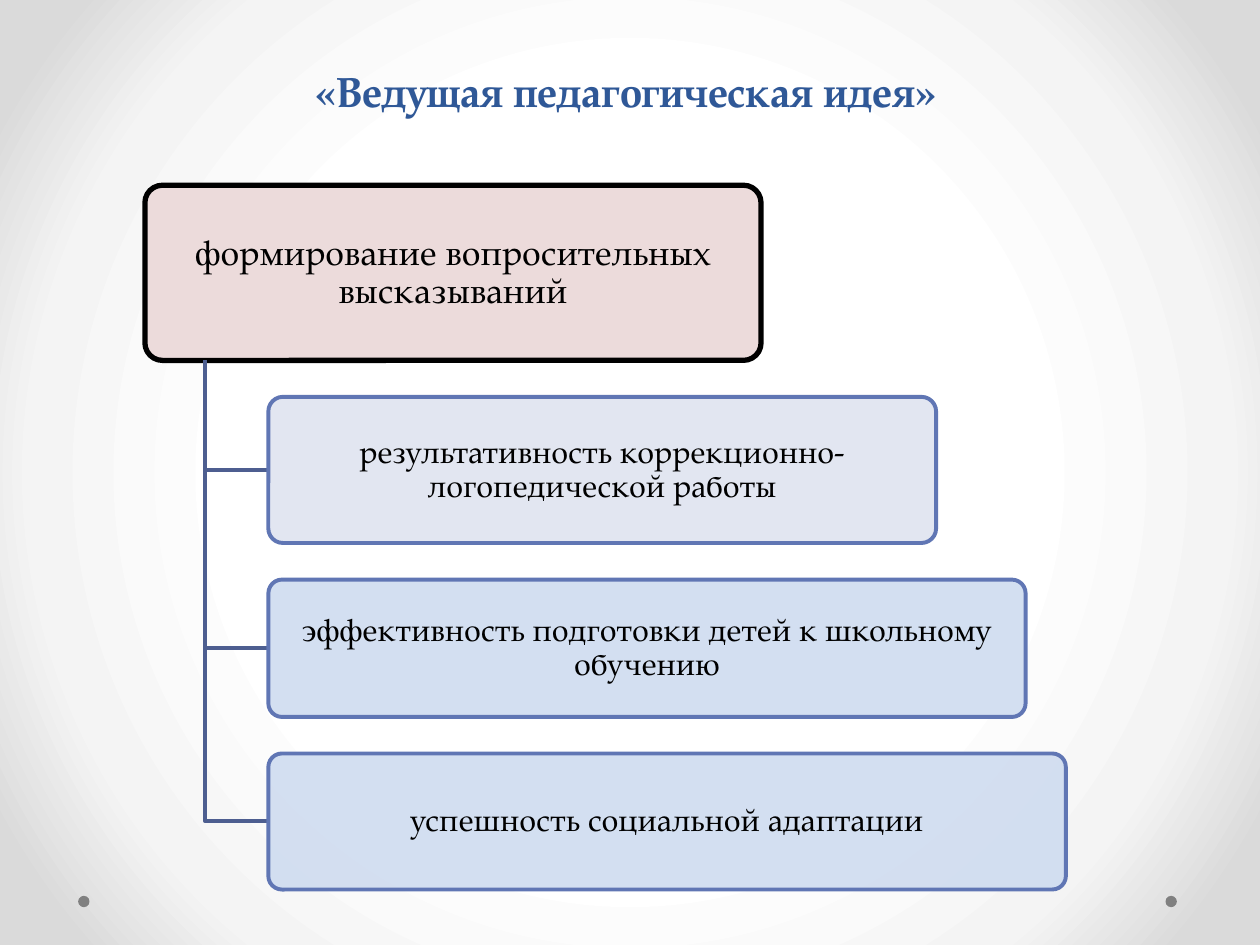
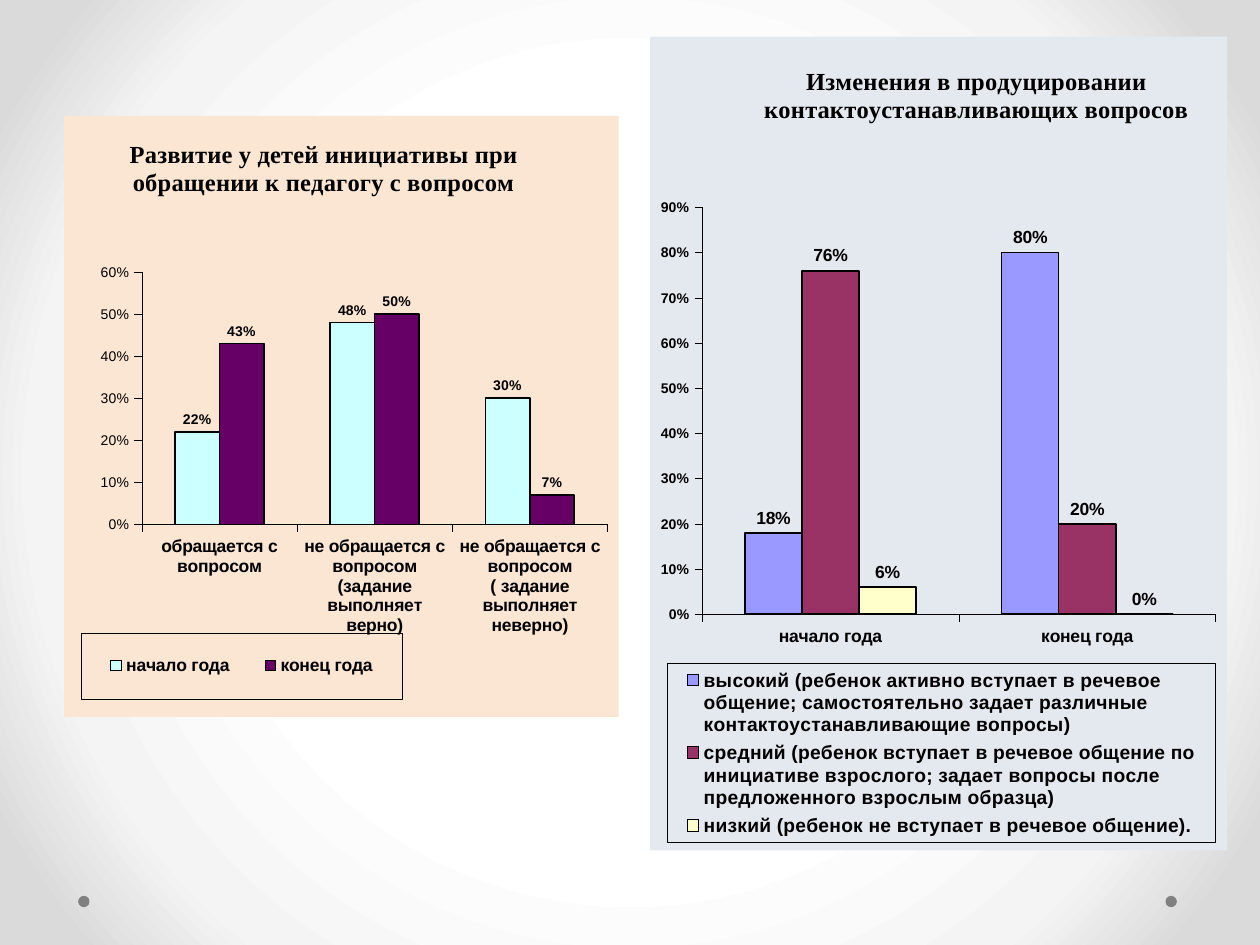
from dataclasses import dataclass
from typing import Any, NamedTuple

from lxml.etree import SubElement
from pptx import Presentation
from pptx.chart.data import CategoryChartData
from pptx.dml.color import RGBColor as RGB
from pptx.enum.chart import XL_CHART_TYPE as ChartType, XL_LABEL_POSITION as LabelPos
from pptx.enum.chart import XL_LEGEND_POSITION as LegendPos, XL_TICK_MARK as Tick
from pptx.enum.shapes import MSO_SHAPE as Shape
from pptx.enum.text import MSO_ANCHOR as Anchor, MSO_AUTO_SIZE as AutoSize, PP_ALIGN as Align
from pptx.oxml import parse_xml
from pptx.oxml.ns import nsdecls, qn
from pptx.util import Pt

PX = 9144
TITLE_ONLY, BLANK = 5, 6


@dataclass(frozen=True)
class Theme:
    """Colours, fonts and type sizes of the deck."""
    ink: str = "000000"
    title: str = "2F5897"
    dot: str = "808080"
    branch: str = "4D5E90"
    border: str = "6076B4"
    root_fill: str = "ECDBDB"
    first_fill: str = "DFE4F0"
    next_fill: str = "CFDCF0"
    backdrop: tuple = ((50, "FFFFFF"), (76, "F4F4F4"), (92, "DADADA"))
    body_font: str = "TeX Gyre Pagella"
    chart_font: str = "Arial"
    chart_title_font: str = "Times New Roman"
    title_size: int = 24
    root_size: int = 20
    node_size: int = 18
    chart_title_size: int = 14
    axis_size: int = 8
    category_size: int = 10


T = Theme()


class Box(NamedTuple):
    """A rectangle in px."""
    x: int
    y: int
    w: int
    h: int

    def emu(self) -> list[int]:
        """Return the four lengths in EMU."""
        return [v * PX for v in self]


class Node(NamedTuple):
    """A rounded box of the tree."""
    text: str
    box: Box
    fill: str
    border: str = T.border
    weight: float = 2.25
    size: int = T.node_size
    opacity: int = 90


class Series(NamedTuple):
    """One set of columns."""
    name: str
    values: tuple
    color: str


class ChartSpec(NamedTuple):
    """A column chart panel; layouts are fractions of the panel."""
    box: Box
    fill: str
    title: str
    title_align: Align
    title_at: tuple
    plot_at: tuple
    legend_at: tuple
    categories: tuple
    series: tuple
    top: float
    label_size: int
    legend_size: int
    bold_scale: bool


ROOT = Node("формирование вопросительных высказываний", Box(115, 147, 489, 139),
            T.root_fill, T.ink, 3, T.root_size, 100)
BRANCHES = (
    Node("результативность коррекционно-логопедической работы",
         Box(213, 315, 530, 116), T.first_fill),
    Node("эффективность подготовки детей к школьному обучению",
         Box(213, 460, 601, 109), T.next_fill),
    Node("успешность социальной адаптации", Box(213, 598, 633, 108), T.next_fill),
)
DOTS = (Box(925, 711, 9, 9), Box(62, 711, 9, 9))

CHARTS = (
    ChartSpec(
        Box(51, 92, 440, 477), "FAE6D3",
        "Развитие у детей инициативы при обращении к педагогу с вопросом",
        Align.LEFT, (0.11, 0.03), (0.14, 0.26, 0.84, 0.42), (0.03, 0.86, 0.58, 0.11),
        ("обращается с вопросом",
         "не обращается с вопросом (задание выполняет верно)",
         "не обращается с вопросом ( задание выполняет неверно)"),
        (Series("начало года", (0.22, 0.48, 0.3), "CCFFFF"),
         Series("конец года", (0.43, 0.5, 0.07), "660066")),
        0.6, 8, 10, False),
    ChartSpec(
        Box(516, 29, 458, 646), "E4E9EF",
        "Изменения в продуцировании контактоустанавливающих вопросов",
        Align.CENTER, (0.19, 0.03), (0.09, 0.21, 0.89, 0.5), (0.03, 0.77, 0.95, 0.22),
        ("начало года", "конец года"),
        (Series("высокий (ребенок активно вступает в речевое общение; самостоятельно "
                "задает различные контактоустанавливающие вопросы)", (0.18, 0.8), "9999FF"),
         Series("средний (ребенок вступает в речевое общение по инициативе взрослого; "
                "задает вопросы после предложенного взрослым образца)", (0.76, 0.2), "993366"),
         Series("низкий (ребенок не вступает в речевое общение).", (0.06, 0), "FFFFCC")),
        0.9, 10, 11, True),
)


def put(obj: Any, **values: Any) -> None:
    """Set several attributes of an object."""
    for name, value in values.items():
        setattr(obj, name, value)


def set_font(font: Any, name: str, size: float, color: str = T.ink, bold: bool = False) -> None:
    """Format a font."""
    put(font, name=name, size=Pt(size), bold=bold)
    font.color.rgb = RGB.from_string(color)


def set_fill(fill: Any, color: str) -> None:
    """Give a solid fill."""
    fill.solid()
    fill.fore_color.rgb = RGB.from_string(color)


def set_line(line: Any, color: str, weight: float) -> None:
    """Give a solid outline."""
    set_fill(line.fill, color)
    line.width = Pt(weight)


def set_backdrop(master: Any) -> None:
    """Paint the radial gradient on the slide master."""
    stops = "".join(f'<a:gs pos="{pos * 1000}"><a:srgbClr val="{color}"/></a:gs>'
                    for pos, color in T.backdrop)
    c_sld = master.element.find(qn("p:cSld"))
    for old in c_sld.findall(qn("p:bg")):
        c_sld.remove(old)
    c_sld.insert(0, parse_xml(
        f'<p:bg {nsdecls("p", "a")}><p:bgPr><a:gradFill rotWithShape="1"><a:gsLst>{stops}</a:gsLst>'
        '<a:path path="circle"><a:fillToRect l="50000" t="50000" r="50000" b="50000"/></a:path>'
        '</a:gradFill><a:effectLst/></p:bgPr></p:bg>'))


def add_slide(prs: Any, layout: int) -> Any:
    """Add a slide with the two corner dots."""
    s = prs.slides.add_slide(prs.slide_layouts[layout])
    for box in DOTS:
        sp = s.shapes.add_shape(Shape.OVAL, *box.emu())
        sp.shadow.inherit = False
        set_fill(sp.fill, T.dot)
        sp.line.fill.background()
    return s


def add_title(s: Any, text: str, box: Box) -> None:
    """Place and format the title placeholder."""
    sp = s.shapes.title
    put(sp, **dict(zip(("left", "top", "width", "height"), box.emu())))
    tf = sp.text_frame
    put(tf, text=text, word_wrap=True, auto_size=AutoSize.NONE, vertical_anchor=Anchor.BOTTOM)
    p = tf.paragraphs[0]
    put(p, alignment=Align.CENTER, line_spacing=Pt(58))
    set_font(p.runs[0].font, T.body_font, T.title_size, T.title, True)


def add_node(s: Any, node: Node) -> None:
    """Draw a rounded box with its text."""
    sp = s.shapes.add_shape(Shape.ROUNDED_RECTANGLE, *node.box.emu())
    sp.shadow.inherit = False
    sp.adjustments[0] = 0.1
    set_fill(sp.fill, node.fill)
    color = sp.fill._xPr.find(qn("a:solidFill"))[0]
    SubElement(color, qn("a:alpha"), val=str(node.opacity * 1000))
    set_line(sp.line, node.border, node.weight)
    tf = sp.text_frame
    put(tf, text=node.text, word_wrap=True, vertical_anchor=Anchor.MIDDLE,
        margin_left=4 * PX, margin_right=4 * PX, margin_top=3 * PX, margin_bottom=3 * PX)
    p = tf.paragraphs[0]
    put(p, alignment=Align.CENTER, line_spacing=0.9)
    set_font(p.runs[0].font, T.body_font, node.size)


def add_branch(s: Any, root: Box, child: Box) -> None:
    """Draw the elbow from the root down to a child."""
    x, y = root.x + root.w // 10, child.y + child.h // 2
    builder = s.shapes.build_freeform(x, root.y + root.h, scale=PX)
    builder.add_line_segments([(x, y), (child.x, y)], close=False)
    sp = builder.convert_to_shape()
    sp.shadow.inherit = False
    sp.fill.background()
    set_line(sp.line, T.branch, 2.25)


def set_layout(el: Any, at: tuple, after: str = "", inner: bool = False) -> None:
    """Fix the place of a chart part as fractions of the chart."""
    for old in el.findall(qn("c:layout")):
        el.remove(old)
    keys = ("x", "y", "w", "h")[:len(at)]
    target = '<c:layoutTarget val="inner"/>' if inner else ""
    modes = "".join(f'<c:{k}Mode val="edge"/>' for k in keys if k in "xy")
    sizes = "".join(f'<c:{k} val="{v}"/>' for k, v in zip(keys, at))
    layout = parse_xml(f'<c:layout {nsdecls("c")}><c:manualLayout>{target}{modes}{sizes}'
                       '</c:manualLayout></c:layout>')
    if after:
        el.find(qn(after)).addnext(layout)
    else:
        el.insert(0, layout)


def paint_part(el: Any, fill: str = "", line: str = "") -> None:
    """Give a chart part its fill and outline."""
    def solid(color: str) -> str:
        """Return the fill element for a colour or for none."""
        return (f'<a:solidFill><a:srgbClr val="{color}"/></a:solidFill>'
                if color else "<a:noFill/>")

    el.find(qn("c:txPr")).addprevious(parse_xml(
        f'<c:spPr {nsdecls("c", "a")}>{solid(fill)}<a:ln w="3175">{solid(line)}</a:ln></c:spPr>'))


def format_axis(axis: Any, size: int, bold: bool) -> None:
    """Format an axis line, its ticks and its labels."""
    put(axis, has_major_gridlines=False, major_tick_mark=Tick.OUTSIDE, minor_tick_mark=Tick.NONE)
    set_line(axis.format.line, T.ink, 0.25)
    set_font(axis.tick_labels.font, T.chart_font, size, bold=bold)


def add_chart(s: Any, spec: ChartSpec) -> None:
    """Draw a column chart panel."""
    data = CategoryChartData(number_format="0%")
    data.categories = spec.categories
    for ser in spec.series:
        data.add_series(ser.name, ser.values)
    chart = s.shapes.add_chart(ChartType.COLUMN_CLUSTERED, *spec.box.emu(), data).chart
    set_font(chart.font, T.chart_font, T.category_size, bold=True)
    paint_part(chart.element, fill=spec.fill)

    put(chart, has_title=True, has_legend=True)
    tf = chart.chart_title.text_frame
    tf.text = spec.title
    p = tf.paragraphs[0]
    p.alignment = spec.title_align
    set_font(p.runs[0].font, T.chart_title_font, T.chart_title_size, bold=True)
    put(chart.legend, position=LegendPos.BOTTOM, include_in_layout=False)
    set_font(chart.legend.font, T.chart_font, spec.legend_size, bold=True)

    body = chart.element.find(qn("c:chart"))
    legend = body.find(qn("c:legend"))
    paint_part(legend, line=T.ink)
    set_layout(body.find(qn("c:title")), spec.title_at, "c:tx")
    set_layout(legend, spec.legend_at, "c:legendPos")
    set_layout(body.find(qn("c:plotArea")), spec.plot_at, inner=True)

    format_axis(chart.category_axis, T.category_size, True)
    format_axis(chart.value_axis, T.axis_size, spec.bold_scale)
    put(chart.value_axis, minimum_scale=0, maximum_scale=spec.top, major_unit=0.1)
    put(chart.value_axis.tick_labels, number_format="0%", number_format_is_linked=False)

    plot = chart.plots[0]
    put(plot, gap_width=150, overlap=0, vary_by_categories=False)
    for ser, item in zip(plot.series, spec.series):
        set_fill(ser.format.fill, item.color)
        set_line(ser.format.line, T.ink, 1)
        labels = ser.data_labels
        put(labels, show_value=True, number_format="0%", number_format_is_linked=False,
            position=LabelPos.OUTSIDE_END)
        set_font(labels.font, T.chart_font, spec.label_size, bold=True)


def main() -> None:
    """Build the deck."""
    prs = Presentation()
    put(prs, slide_width=1000 * PX, slide_height=750 * PX)
    set_backdrop(prs.slide_master)

    s = add_slide(prs, TITLE_ONLY)
    add_title(s, "«Ведущая педагогическая идея» ", Box(51, 21, 900, 76))
    add_node(s, ROOT)
    for node in BRANCHES:
        add_branch(s, ROOT.box, node.box)
        add_node(s, node)

    s = add_slide(prs, BLANK)
    for spec in CHARTS:
        add_chart(s, spec)
    prs.save("out.pptx")


if __name__ == "__main__":
    main()
